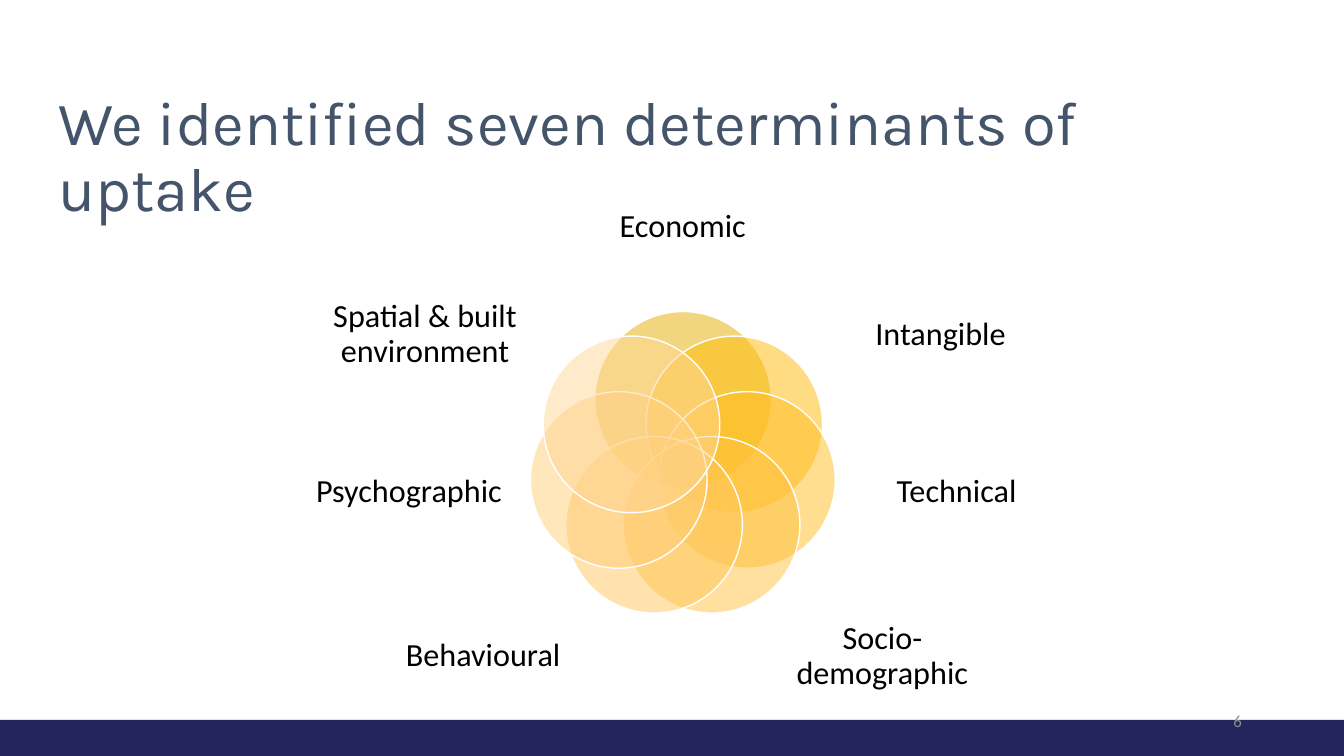
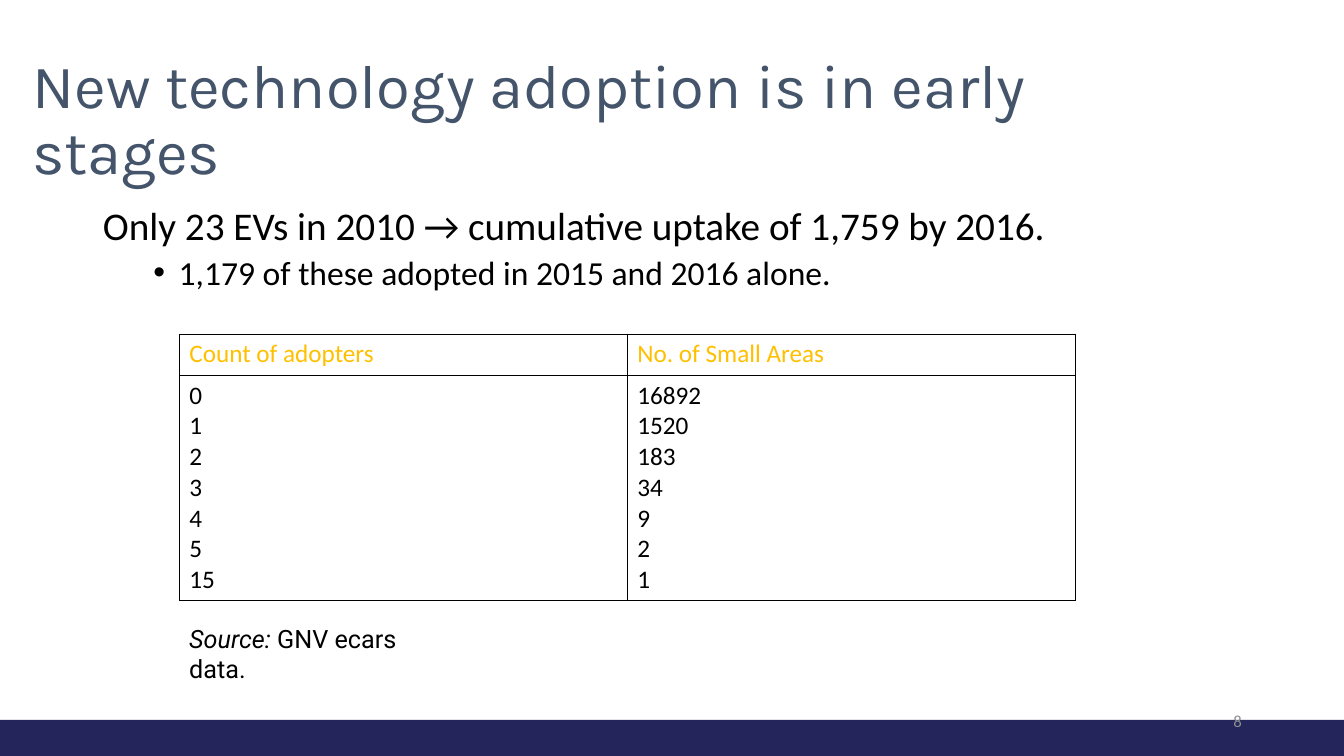
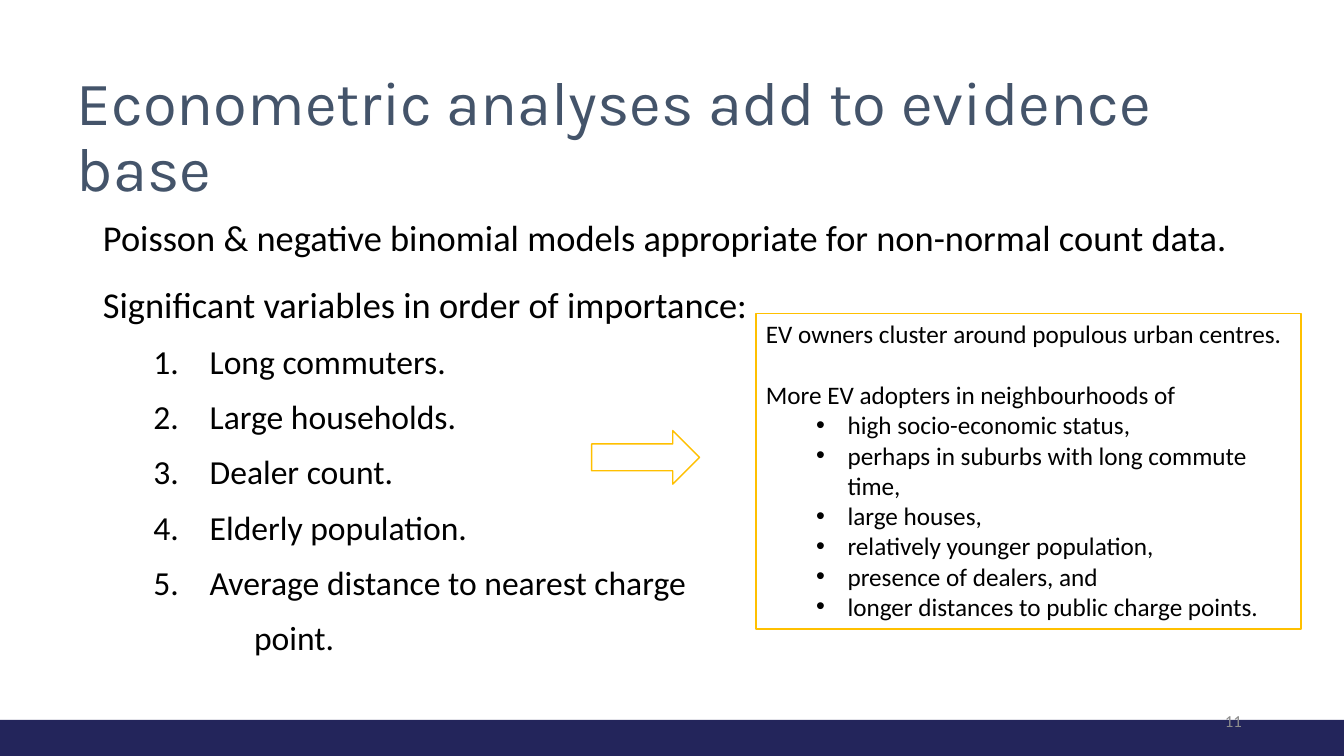
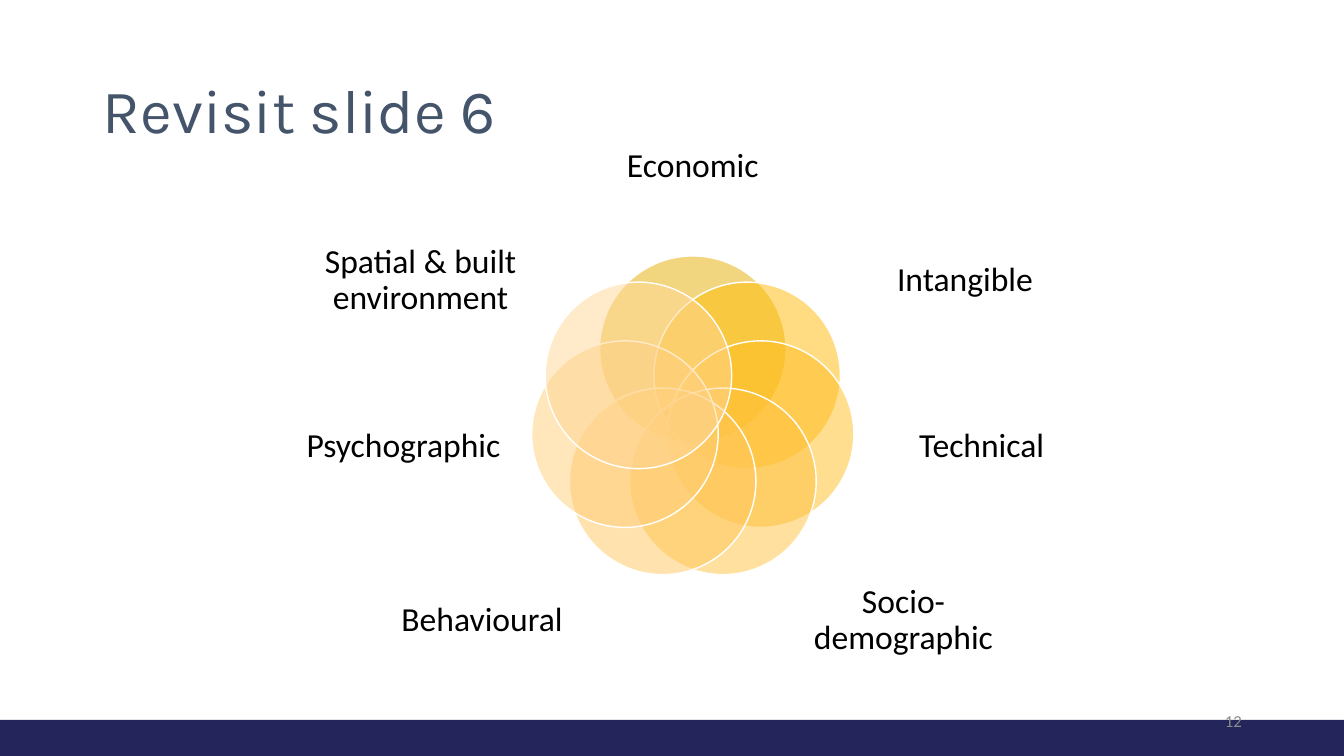
"""Build four slides on the determinants of electric vehicle uptake."""
from dataclasses import dataclass
from math import cos, pi, sin

from lxml.etree import SubElement
from pptx import Presentation
from pptx.dml.color import RGBColor
from pptx.enum.shapes import MSO_SHAPE
from pptx.enum.text import MSO_ANCHOR, MSO_AUTO_SIZE, PP_ALIGN
from pptx.oxml.ns import qn
from pptx.util import Cm, Pt


@dataclass(frozen=True)
class Theme:
    navy: str = "23255B"
    slate: str = "44546A"
    amber: str = "FFC000"
    grey: str = "8C8C8C"
    black: str = "000000"
    white: str = "FFFFFF"
    petals: tuple = ("E7AE00", "FFBB05", "FFBE22", "FFC23F", "FFC75C", "FFCE78", "FFD695")
    heading_font: str = "Karla"
    text_font: str = "Calibri"
    source_font: str = "Roboto"
    title: int = 44
    lead: int = 28
    statement: int = 26
    item: int = 24
    small: int = 18
    number: int = 12


@dataclass(frozen=True)
class Line:
    text: str
    size: int = 18
    color: str = Theme.black
    font: str = Theme.text_font
    italic: bool = False
    level: int = 0
    margin: float = 0
    hanging: float = 0
    bullet: str = ""
    spacing: float = 1.0
    before: float = 0
    align: int = PP_ALIGN.LEFT


THEME = Theme()
SLIDE_SIZE = (33.87, 19.05)
BAND = (0, 18.14, 33.87, 0.91)
NUMBER = (23.93, 17.65, 7.62, 1.02)
TITLE_SIZE = (29.21, 3.68)
BODY = (2.34, 5.08, 29.21, 12.09)

RING = 0.373
DETERMINANTS = [
    ("Economic", 0, -1.35, 1.15, 0.61),
    ("Intangible", 1.46, -0.74, 1.08, 0.67),
    ("Technical", 1.55, 0.15, 1.06, 0.72),
    ("Socio-demographic", 1.13, 1.08, 1.15, 0.66),
    ("Behavioural", -1.13, 1.08, 1.15, 0.66),
    ("Psychographic", -1.55, 0.15, 1.06, 0.72),
    ("Spatial & built environment", -1.46, -0.74, 1.08, 0.67),
]

ADOPTION = [
    Line("Only 23 EVs in 2010 → cumulative uptake of 1,759 by 2016.", THEME.lead, spacing=0.9),
    Line("1,179 of these adopted in 2015 and 2016 alone.", THEME.item, level=1,
         margin=1.91, hanging=0.64, bullet="•", spacing=0.9, before=5),
]
ADOPTERS = {
    "Count of adopters": ["0", "1", "2", "3", "4", "5", "15"],
    "No. of Small Areas": ["16892", "1520", "183", "34", "9", "2", "1"],
}
ADOPTERS_AT = (4.52, 8.41, 22.58, 6.63)
ADOPTERS_ROWS = (1.04, 5.59)
SOURCE = [("Source: ", True), ("GNV ecars data.", False)]
SOURCE_AT = (4.52, 15.57, 6.53, 1.02)

VARIABLES = [
    "Long commuters.",
    "Large households.",
    "Dealer count.",
    "Elderly population.",
    "Average distance to nearest charge",
]
MODELS = [
    Line("Poisson & negative binomial models appropriate for non-normal count data.",
         THEME.statement, spacing=1.2),
    Line("Significant variables in order of importance:", THEME.statement,
         spacing=1.2, before=10),
    *[Line(variable, THEME.item, level=1, margin=2.69, hanging=1.42, bullet="1.",
           spacing=1.2, before=5) for variable in VARIABLES],
    Line("point.", THEME.item, level=1, margin=3.81, spacing=1.2, before=5),
]
NEIGHBOURHOODS = [
    "high socio-economic status,",
    "perhaps in suburbs with long commute time,",
    "large houses,",
    "relatively younger population,",
    "presence of dealers, and",
    "longer distances to public charge points.",
]
FINDINGS = [
    Line("EV owners cluster around populous urban centres."),
    Line("More EV adopters in neighbourhoods of", before=22),
    *[Line(trait, level=1, margin=2.06, hanging=0.79, bullet="•") for trait in NEIGHBOURHOODS],
]
FINDINGS_AT = (19.05, 7.9, 13.74, 7.95)
ARROW_AT = (14.91, 10.85, 2.72, 1.35)


def lengths(box):
    return [Cm(round(value, 2)) for value in box]


def color(code):
    return RGBColor.from_string(code)


def place(shape, box):
    shape.left, shape.top, shape.width, shape.height = lengths(box)


def add_run(paragraph, line):
    run = paragraph.add_run()
    run.text = line.text
    run.font.name = line.font
    run.font.size = Pt(line.size)
    run.font.italic = line.italic
    run.font.color.rgb = color(line.color)


def write(frame, lines):
    for index, line in enumerate(lines):
        paragraph = frame.add_paragraph() if index else frame.paragraphs[0]
        paragraph.level = line.level
        paragraph.alignment = line.align
        paragraph.line_spacing = line.spacing
        paragraph.space_before = Pt(line.before)
        properties = paragraph._p.get_or_add_pPr()
        properties.set("marL", str(Cm(line.margin)))
        properties.set("indent", str(-Cm(line.hanging)))
        if line.bullet == "1.":
            SubElement(properties, qn("a:buFont"), typeface="+mj-lt")
            SubElement(properties, qn("a:buAutoNum"), type="arabicPeriod")
        elif line.bullet:
            SubElement(properties, qn("a:buFont"), typeface="Arial")
            SubElement(properties, qn("a:buChar"), char=line.bullet)
        else:
            SubElement(properties, qn("a:buNone"))
        add_run(paragraph, line)


def fix_frame(frame, anchor):
    frame.word_wrap = True
    frame.auto_size = MSO_AUTO_SIZE.NONE
    frame.vertical_anchor = anchor
    return frame


def add_text(shapes, box, lines, anchor=MSO_ANCHOR.MIDDLE, inset=None):
    frame = fix_frame(shapes.add_textbox(*lengths(box)).text_frame, anchor)
    if inset is not None:
        frame.margin_left = frame.margin_right = Cm(inset)
        frame.margin_top = frame.margin_bottom = Cm(inset)
    write(frame, lines)
    return frame


def add_figure(shapes, preset, box, fill, outline=None):
    figure = shapes.add_shape(preset, *lengths(box))
    figure.shadow.inherit = False
    figure.fill.solid()
    figure.fill.fore_color.rgb = color(fill)
    if outline:
        figure.line.color.rgb = color(outline)
        figure.line.width = Pt(1)
    else:
        figure.line.fill.background()
    return figure


def start_slide(deck, title, corner, number, body=None):
    slide = deck.slides.add_slide(deck.slide_layouts[1 if body else 5])
    heading = slide.shapes.title
    place(heading, (*corner, *TITLE_SIZE))
    write(fix_frame(heading.text_frame, MSO_ANCHOR.MIDDLE),
          [Line(title, THEME.title, THEME.slate, THEME.heading_font, spacing=0.9)])
    if body:
        content = slide.placeholders[1]
        place(content, BODY)
        write(fix_frame(content.text_frame, MSO_ANCHOR.TOP), body)
    add_text(slide.shapes, NUMBER,
             [Line(number, THEME.number, THEME.grey, align=PP_ALIGN.RIGHT)])
    return slide


def add_determinants(slide, center, diameter, size):
    x, y = center
    flower = slide.shapes.add_group_shape().shapes
    for index, (name, across, down, width, height) in enumerate(DETERMINANTS):
        angle = 2 * pi * index / len(DETERMINANTS)
        left = x + diameter * (RING * sin(angle) - 0.5)
        top = y - diameter * (RING * cos(angle) + 0.5)
        petal = add_figure(flower, MSO_SHAPE.OVAL, (left, top, diameter, diameter),
                           THEME.petals[index], THEME.white)
        tint = petal.element.spPr.find(qn("a:solidFill"))[0]
        SubElement(tint, qn("a:alpha"), val="50000")
        label = (x + diameter * (across - width / 2), y + diameter * (down - height / 2),
                 diameter * width, diameter * height)
        add_text(flower, label,
                 [Line(name, size, spacing=0.9, align=PP_ALIGN.CENTER)], inset=0)


def border(cell):
    properties = cell._tc.get_or_add_tcPr()
    for position, side in enumerate(("a:lnL", "a:lnR", "a:lnT", "a:lnB")):
        edge = SubElement(properties, qn(side), w=str(Pt(0.25)))
        SubElement(SubElement(edge, qn("a:solidFill")), qn("a:srgbClr"), val=THEME.black)
        properties.insert(position, edge)


def add_adopters(slide):
    table = slide.shapes.add_table(2, len(ADOPTERS), *lengths(ADOPTERS_AT)).table
    table.first_row = table.horz_banding = False
    for row, height in zip(table.rows, ADOPTERS_ROWS):
        row.height = Cm(height)
    for column, (header, values) in enumerate(ADOPTERS.items()):
        entries = ([Line(header, THEME.small, THEME.amber)],
                   [Line(value, THEME.small) for value in values])
        for row, lines in enumerate(entries):
            cell = table.cell(row, column)
            cell.fill.background()
            border(cell)
            write(cell.text_frame, lines)


def add_source(slide):
    first, *rest = [Line(text, THEME.small, font=THEME.source_font, italic=italic)
                    for text, italic in SOURCE]
    frame = add_text(slide.shapes, SOURCE_AT, [first], MSO_ANCHOR.TOP)
    for part in rest:
        add_run(frame.paragraphs[0], part)


def add_findings(slide):
    add_figure(slide.shapes, MSO_SHAPE.RIGHT_ARROW, ARROW_AT, THEME.white, THEME.amber)
    findings = add_figure(slide.shapes, MSO_SHAPE.RECTANGLE, FINDINGS_AT,
                          THEME.white, THEME.amber)
    write(fix_frame(findings.text_frame, MSO_ANCHOR.TOP), FINDINGS)


def add_master_band(deck, slide):
    band = add_figure(slide.shapes, MSO_SHAPE.RECTANGLE, BAND, THEME.navy)
    deck.slide_master.shapes.element.insert(2, band.element)


def main():
    deck = Presentation()
    deck.slide_width, deck.slide_height = lengths(SLIDE_SIZE)

    determinants = start_slide(deck, "We identified seven determinants of uptake",
                               (1.22, 2.16), "6")
    add_master_band(deck, determinants)
    add_determinants(determinants, (17.21, 11.73), 4.45, 23)

    adoption = start_slide(deck, "New technology adoption is in early stages",
                           (0.56, 1.22), "8", ADOPTION)
    add_adopters(adoption)
    add_source(adoption)

    evidence = start_slide(deck, "Econometric analyses add to evidence base",
                           (1.68, 1.65), "11", MODELS)
    add_findings(evidence)

    revisit = start_slide(deck, "Revisit slide 6", (2.34, 1.02), "12")
    add_determinants(revisit, (17.46, 10.55), 4.7, 24)

    deck.save("out.pptx")


if __name__ == "__main__":
    main()
